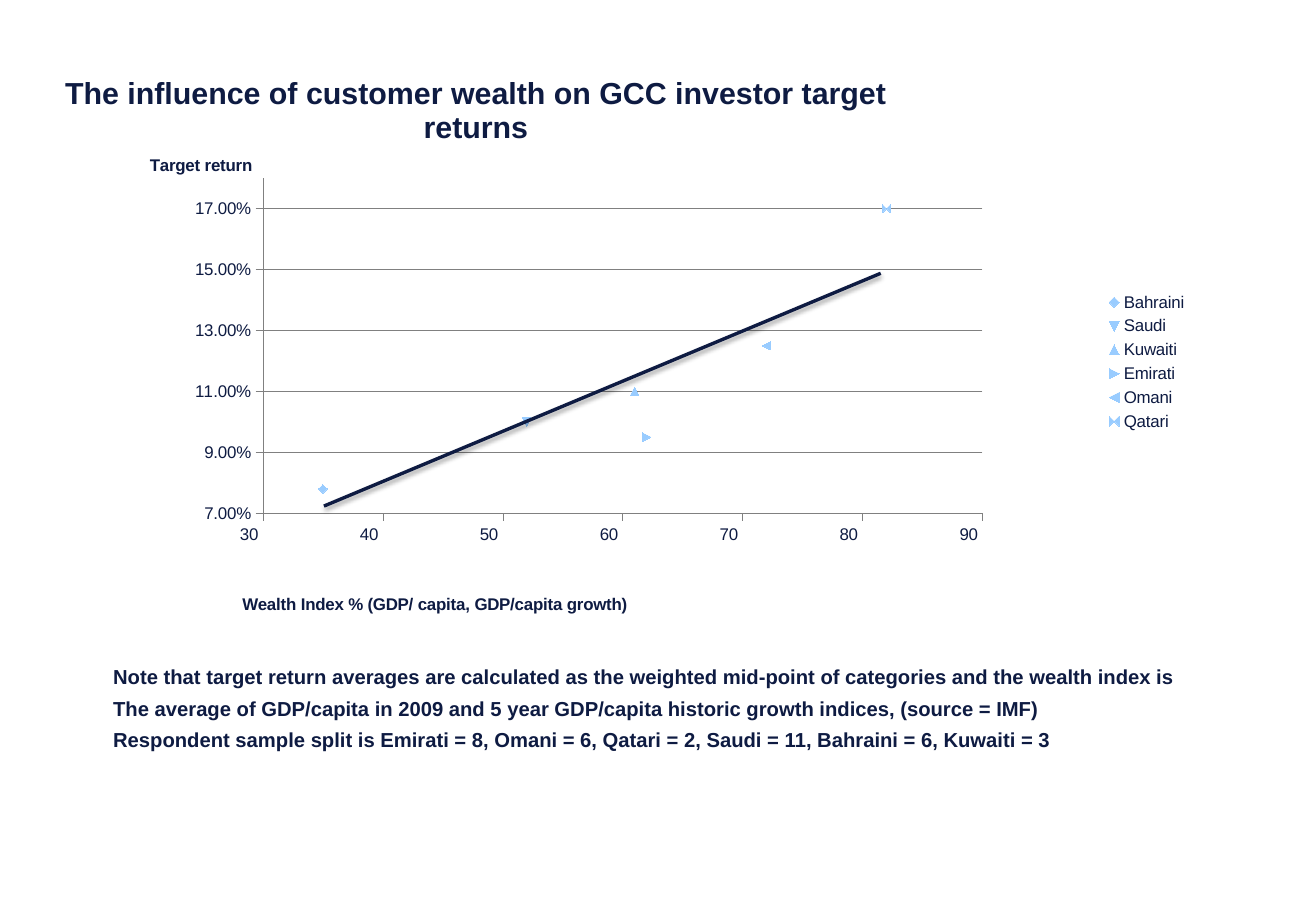
from lxml import etree
from pptx import Presentation
from pptx import util as u
from pptx.chart import data as chart_data
from pptx.dml.color import RGBColor
from pptx.enum import chart as chart_types, shapes
from pptx.oxml import parse_xml
from pptx.oxml.ns import nsdecls, qn

COLORS = {"navy": "0E1B42", "marker": "99CCFF", "grid": "808080"}
FONT = "Arial"
CHART_WIDTH, CHART_HEIGHT = 696, 357
TITLE = "The influence of customer wealth on GCC investor target returns"
POINTS = [
    ("Bahraini ", 35, 0.078),
    ("Saudi ", 52, 0.1),
    ("Kuwaiti ", 61, 0.11),
    ("Emirati ", 62, 0.095),
    ("Omani ", 72, 0.125),
    ("Qatari ", 82, 0.17),
]
WEALTH_AXIS = ("Wealth Index % (GDP/ capita, GDP/capita growth)", 30, 90, 10, "0_ ")
RETURN_AXIS = ("Target return", 0.07, 0.18, 0.02, "0.00%")
NOTES = [
    "Note that target return averages are calculated as the weighted mid-point of categories and the wealth index is",
    "The average of GDP/capita in 2009 and 5 year GDP/capita historic growth indices, (source = IMF)",
    "Respondent sample split is Emirati = 8, Omani = 6, Qatari = 2, Saudi = 11, Bahraini = 6, Kuwaiti = 3",
]


def color(name):
    return RGBColor.from_string(COLORS[name])


def style(font, size, bold):
    font.name, font.size, font.bold = FONT, u.Pt(size), bold
    font.color.rgb = color("navy")


def place(element, x, y, **size):
    layout = element.find(qn("c:layout"))
    if layout is None:
        layout = etree.Element(qn("c:layout"))
        first = element.find(qn("c:tx"))
        element.insert(0 if first is None else element.index(first) + 1, layout)
    values = {"layoutTarget": "inner"} if size else {}
    values.update(xMode="edge", yMode="edge", x=x / CHART_WIDTH, y=y / CHART_HEIGHT)
    if size:
        values.update(w=size["width"] / CHART_WIDTH, h=size["height"] / CHART_HEIGHT)
    manual = etree.SubElement(layout, qn("c:manualLayout"))
    for tag, value in values.items():
        etree.SubElement(manual, qn(f"c:{tag}")).set("val", str(value))


def set_title(owner, text, size, x, y):
    owner.has_title = True
    title = owner.chart_title if hasattr(owner, "chart_title") else owner.axis_title
    title.text_frame.text = text
    style(title.text_frame.paragraphs[0].runs[0].font, size, True)
    element = title.text_frame._txBody.getparent().getparent()
    element.find(".//" + qn("a:bodyPr")).set("rot", "0")
    place(element, x, y)


def set_line(line):
    line.color.rgb, line.width = color("grid"), u.Pt(0.25)


def set_axis(axis, spec, x, y):
    text, low, high, step, number_format = spec
    set_title(axis, text, 10, x, y)
    axis.minimum_scale, axis.maximum_scale, axis.major_unit = low, high, step
    axis.major_tick_mark = chart_types.XL_TICK_MARK.OUTSIDE
    axis.minor_tick_mark = chart_types.XL_TICK_MARK.NONE
    axis.tick_labels.number_format = number_format
    axis.tick_labels.number_format_is_linked = False
    style(axis.tick_labels.font, 10, False)
    set_line(axis.format.line)


def scatter_data():
    content = chart_data.XyChartData()
    for name, _, target in POINTS:
        series = content.add_series(name)
        for owner, wealth, _ in POINTS:
            series.add_data_point(wealth, target if owner == name else None)
    return content


def add_scatter(slide):
    chart = slide.shapes.add_chart(
        chart_types.XL_CHART_TYPE.XY_SCATTER, u.Pt(18), u.Pt(36),
        u.Pt(CHART_WIDTH), u.Pt(CHART_HEIGHT), scatter_data()).chart
    for point in list(chart._chartSpace.iter(qn("c:pt"))):
        if point.find(qn("c:v")).text in (None, "", "None"):
            point.getparent().remove(point)
    style(chart.font, 10, False)
    set_title(chart, TITLE, 18, 17.3, 4.2)
    set_axis(chart.category_axis, WEALTH_AXIS, 123.8, 314.1)
    set_axis(chart.value_axis, RETURN_AXIS, 69, 53.5)
    chart.category_axis.has_major_gridlines = False
    labels = chart.category_axis._element.find(qn("c:txPr"))
    labels.find(qn("a:bodyPr")).set("rot", "-6000")
    chart.value_axis.has_major_gridlines = True
    set_line(chart.value_axis.major_gridlines.format.line)
    chart.has_legend = True
    chart.legend.position = chart_types.XL_LEGEND_POSITION.RIGHT
    chart.legend.include_in_layout = False
    style(chart.legend.font, 10, False)
    plot = chart.plots[0]
    plot.vary_by_categories = False
    for series in plot.series:
        series.format.line.fill.background()
        series.marker.style = chart_types.XL_MARKER_STYLE.AUTOMATIC
        series.marker.size = 5
        series.marker.format.fill.solid()
        series.marker.format.fill.fore_color.rgb = color("marker")
        series.marker.format.line.fill.background()
    place(chart._chartSpace.find(".//" + qn("c:plotArea")),
          137.8, 69.6, width=426.6, height=198.8)


def add_notes(slide):
    frame = slide.shapes.add_textbox(u.Pt(60), u.Pt(390), u.Pt(654), u.Pt(60)).text_frame
    frame.word_wrap = True
    frame.text = "\n".join(NOTES)
    for paragraph in frame.paragraphs:
        properties = paragraph._p.get_or_add_pPr()
        properties.set("marL", str(u.Pt(27)))
        properties.set("indent", str(-u.Pt(27)))
        paragraph.space_after = u.Pt(4.5)
        style(paragraph.runs[0].font, 12, True)


def add_trend(slide):
    trend = slide.shapes.add_connector(
        shapes.MSO_CONNECTOR.STRAIGHT, u.Pt(192), u.Pt(300), u.Pt(522), u.Pt(162))
    trend.line.color.rgb, trend.line.width = color("navy"), u.Pt(2)
    trend._element.spPr.append(parse_xml(
        f'<a:effectLst {nsdecls("a")}><a:outerShdw blurRad="{u.Pt(3.1)}" dist="{u.Pt(1.6)}" '
        'dir="5400000" rotWithShape="0"><a:srgbClr val="000000"><a:alpha val="38000"/>'
        '</a:srgbClr></a:outerShdw></a:effectLst>'))


def main():
    """Build the slide on customer wealth and target returns."""
    presentation = Presentation()
    presentation.slide_width, presentation.slide_height = u.Pt(780), u.Pt(540)
    slide = presentation.slides.add_slide(presentation.slide_layouts[6])
    add_scatter(slide)
    add_notes(slide)
    add_trend(slide)
    presentation.save("out.pptx")


if __name__ == "__main__":
    main()
